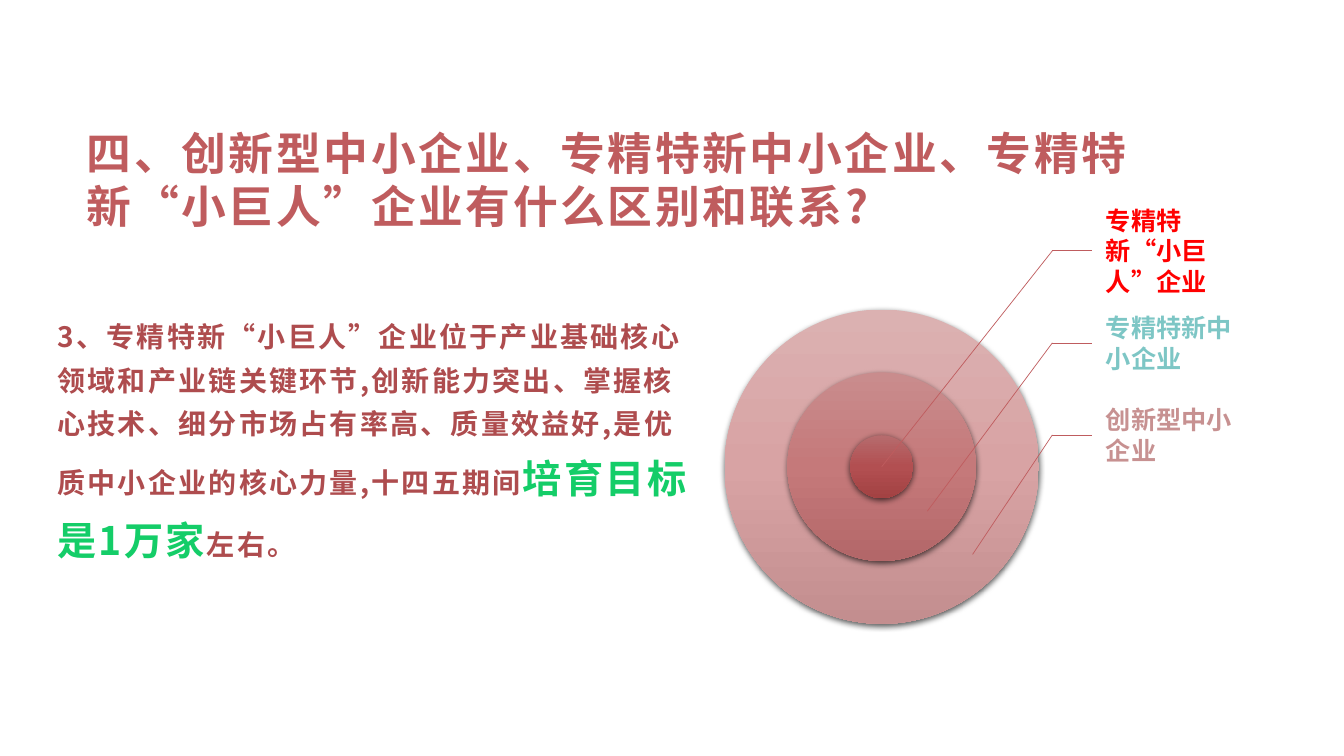
from copy import deepcopy

from lxml.etree import SubElement
from pptx import Presentation
from pptx.dml.color import RGBColor
from pptx.enum.shapes import MSO_CONNECTOR as Line, MSO_SHAPE as Preset
from pptx.enum.text import MSO_ANCHOR as Anchor
from pptx.oxml.ns import qn
from pptx.util import Cm, Pt

CJK = "Noto Sans CJK SC"
ROSE, BRICK, GREEN = "BF5C5E", "AE4C4E", "14CD68"

TITLE = "四、创新型中小企业、专精特新中小企业、专精特新“小巨人”企业有什么区别和联系?"
BODY = [
    ("3、专精特新“小巨人”企业位于产业基础核心领域和产业链关键环节,"
     "创新能力突出、掌握核心技术、细分市场占有率高、质量效益好,"
     "是优质中小企业的核心力量,十四五期间", 20, BRICK),
    ("培育目标是1万家", 28, GREEN),
    ("左右。", 20, BRICK),
]

CENTER_X, CENTER_Y, OUTER = 22.22, 11.76, 7.92
RINGS = [
    (5, ("DBB1B1", "D8A3A4", "C38E8F")),
    (3, ("C98C8D", "C5797A", "B36769")),
    (1, ("B66B6D", "B24F51", "A34243")),
]

LABEL_LEFT, LABEL_TOP, LABEL_WIDTH, LABEL_HEIGHT = 27.51, 5.16, 3.96, 2.32
ELBOW_X = 26.52
LABELS = [
    ("专精特新“小巨人”企业", "FF0000", (CENTER_X, CENTER_Y)),
    ("专精特新中小企业", "7DC6C5", (23.37, 12.88)),
    ("创新型中小企业", "C79191", (24.51, 13.97)),
]


def color(value):
    """Turn a hex string into a colour."""
    return RGBColor.from_string(value)


def add_box(page, left, top, width, height, anchor, insets):
    """Add an empty wrapping text box."""
    box = page.shapes.add_textbox(Cm(left), Cm(top), Cm(width), Cm(height))
    frame = box.text_frame
    frame.word_wrap = True
    frame.vertical_anchor = anchor
    frame.margin_left, frame.margin_right = (Cm(inset) for inset in insets)
    frame.margin_top = frame.margin_bottom = Cm(0.08)
    return box


def add_span(para, text, size, fill, latin=CJK, spacing=0):
    """Add one bold run with its letter spacing in points."""
    span = para.add_run()
    span.text = text
    font = span.font
    font.size, font.bold, font.name = Pt(size), True, latin
    font.color.rgb = color(fill)
    properties = span._r.get_or_add_rPr()
    properties.set("spc", str(round(spacing * 100)))
    SubElement(properties, qn("a:ea")).set("typeface", CJK)


def add_shadow(shape):
    """Give a shape a soft shadow straight below it."""
    effects = SubElement(shape.element.spPr, qn("a:effectLst"))
    shadow = SubElement(effects, qn("a:outerShdw"), blurRad=str(Pt(4.5)),
                        dist=str(Pt(1.5)), dir="5400000", rotWithShape="0")
    black = SubElement(shadow, qn("a:srgbClr"), val="000000")
    SubElement(black, qn("a:alpha"), val="63000")


def add_ring(page, diameter, colors):
    """Add a concentric disc with a vertical three-stop gradient."""
    ring = page.shapes.add_shape(
        Preset.OVAL, Cm(CENTER_X - diameter / 2), Cm(CENTER_Y - diameter / 2),
        Cm(diameter), Cm(diameter))
    ring.line.fill.background()
    ring.fill.gradient()
    ring.fill.gradient_angle = 270
    stops = ring.element.spPr.find(".//" + qn("a:gsLst"))
    stops.append(deepcopy(stops[-1]))
    for index, stop in enumerate(ring.fill.gradient_stops):
        stop.position = index / 2
        stop.color.rgb = color(colors[index])
    add_shadow(ring)


def add_line(page, start, end):
    """Add a thin leader line."""
    line = page.shapes.add_connector(
        Line.STRAIGHT, *(Cm(value) for value in (*start, *end)))
    line.line.color.rgb = color(ROSE)
    line.line.width = Pt(0.5)
    SubElement(line.element.spPr, qn("a:effectLst"))
    return line


def add_label(page, index, text, fill, target):
    """Add a label and the bent leader to its ring."""
    top = LABEL_TOP + index * LABEL_HEIGHT
    box = add_box(page, LABEL_LEFT, top, LABEL_WIDTH, LABEL_HEIGHT,
                  Anchor.MIDDLE, (0.36, 0.08))
    add_span(box.text_frame.paragraphs[0], text, 18, fill, "Arial")
    elbow = (ELBOW_X, top + LABEL_HEIGHT / 2)
    add_line(page, elbow, (LABEL_LEFT, elbow[1])).end_connect(box, 1)
    add_line(page, elbow, target)


def main():
    """Build the slide."""
    deck = Presentation()
    deck.slide_width, deck.slide_height = Cm(33.87), Cm(19.05)
    page = deck.slides.add_slide(deck.slide_layouts[6])

    title = add_box(page, 2.01, 1.02, 27.71, 4.93, Anchor.BOTTOM, (0.18, 0.18))
    add_span(title.text_frame.paragraphs[0], TITLE, 32, ROSE, spacing=1.8)

    body = add_box(page, 1.27, 7.72, 16.59, 6.83, Anchor.TOP, (0.18, 0.18))
    para = body.text_frame.paragraphs[0]
    para.line_spacing, para.space_after = 1.3, Pt(8)
    for text, size, fill in BODY:
        add_span(para, text, size, fill, spacing=1.6)

    for step, colors in RINGS:
        add_ring(page, OUTER * step / 5, colors)
    for index, label in enumerate(LABELS):
        add_label(page, index, *label)

    deck.save("out.pptx")


if __name__ == "__main__":
    main()
